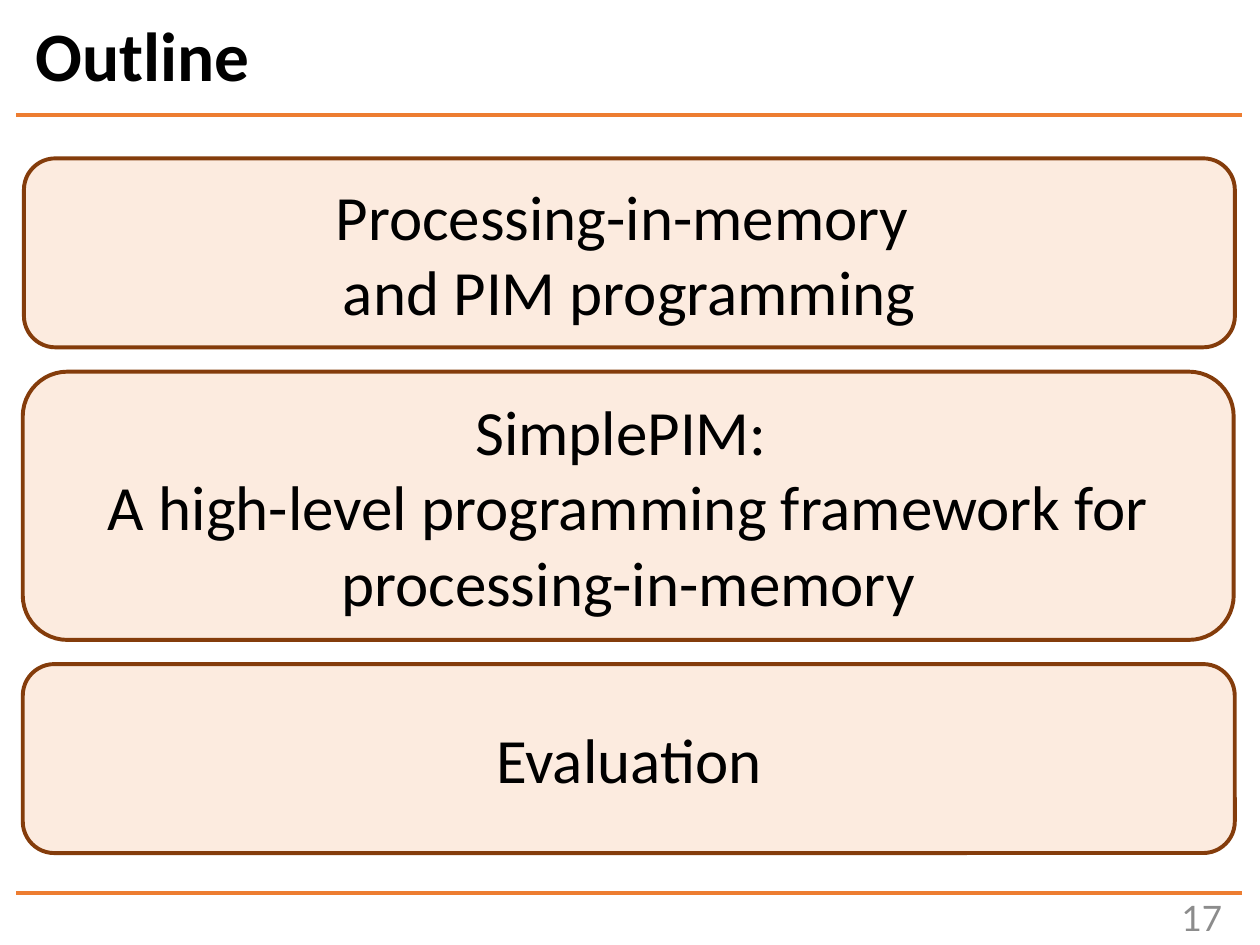
from lxml import etree
from pptx import Presentation
from pptx.dml.color import RGBColor
from pptx.enum.shapes import MSO_CONNECTOR, MSO_SHAPE
from pptx.enum.text import MSO_ANCHOR, MSO_AUTO_SIZE, PP_ALIGN
from pptx.oxml.ns import qn
from pptx.util import Pt

STRAIGHT = MSO_CONNECTOR.STRAIGHT
ROUNDED = MSO_SHAPE.ROUNDED_RECTANGLE
MIDDLE = MSO_ANCHOR.MIDDLE
NO_AUTOFIT = MSO_AUTO_SIZE.NONE
LEFT, CENTER, RIGHT = PP_ALIGN.LEFT, PP_ALIGN.CENTER, PP_ALIGN.RIGHT

BLACK = RGBColor(0x00, 0x00, 0x00)
GRAY = RGBColor(0x8C, 0x8C, 0x8C)
ORANGE = RGBColor(0xED, 0x7D, 0x31)
PEACH = RGBColor(0xF4, 0xB1, 0x83)
BROWN = RGBColor(0x84, 0x3C, 0x0B)

TOPICS = [  # left, top, width, height, lines
    (13.7, 90.5, 692, 108, ["Processing-in-memory ", "and PIM programming"]),
    (13, 212.4, 692, 153.3,
     ["SimplePIM: ",
      "A high-level programming framework for processing-in-memory"]),
    (13, 379.5, 692.6, 108, ["Evaluation"]),
]


def write(tf, lines, size, color, align, font="Calibri", bold=False):
    tf.word_wrap = True
    tf.auto_size = NO_AUTOFIT
    tf.vertical_anchor = MIDDLE
    for i, line in enumerate(lines):
        p = tf.add_paragraph() if i else tf.paragraphs[0]
        p.alignment = align
        r = p.add_run()
        r.text = line
        r.font.name = font
        r.font.size = Pt(size)
        r.font.bold = bold
        r.font.color.rgb = color


def add_title(s, text):
    sp = s.shapes.title
    sp.left, sp.top, sp.width, sp.height = Pt(13), Pt(10), Pt(700.6), Pt(47.5)
    write(sp.text_frame, [text], 39.6, BLACK, LEFT, bold=True)
    sp.text_frame.paragraphs[0].line_spacing = 0.9


def add_rule(s, y):
    line = s.shapes.add_connector(STRAIGHT, Pt(9.4), Pt(y), Pt(710), Pt(y))
    line.line.color.rgb = ORANGE
    line.line.width = Pt(2.25)
    etree.SubElement(line._element.spPr, qn("a:effectLst"))


def add_topic(s, left, top, width, height, lines):
    sp = s.shapes.add_shape(ROUNDED, Pt(left), Pt(top), Pt(width), Pt(height))
    sp.shadow.inherit = False
    sp.fill.solid()
    sp.fill.fore_color.rgb = PEACH
    color = sp._element.spPr.find(qn("a:solidFill"))[0]
    etree.SubElement(color, qn("a:alpha"), val="25000")
    sp.line.color.rgb = BROWN
    sp.line.width = Pt(2.25)
    write(sp.text_frame, lines, 36, BLACK, CENTER)


def add_page_number(s, number):
    sp = s.shapes.add_textbox(Pt(628), Pt(510), Pt(77.6), Pt(28.8))
    write(sp.text_frame, [number], 20, GRAY, RIGHT, font="Lato")


def main():
    prs = Presentation()
    prs.slide_width, prs.slide_height = Pt(720), Pt(540)
    s = prs.slides.add_slide(prs.slide_layouts[5])
    add_page_number(s, "17")
    for y in (65.7, 510.3):
        add_rule(s, y)
    add_title(s, "Outline")
    for topic in TOPICS:
        add_topic(s, *topic)
    prs.save("out.pptx")


if __name__ == "__main__":
    main()
